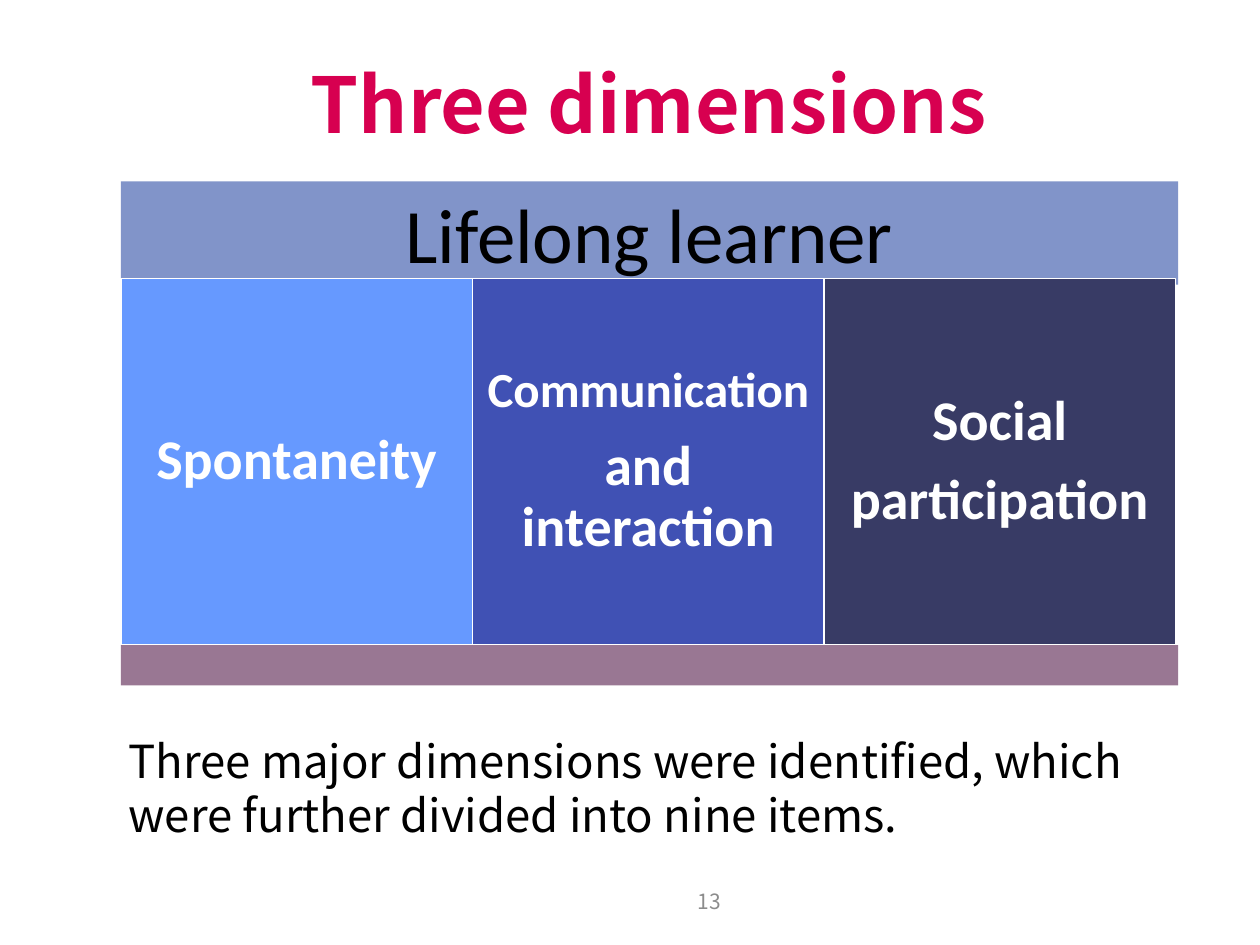
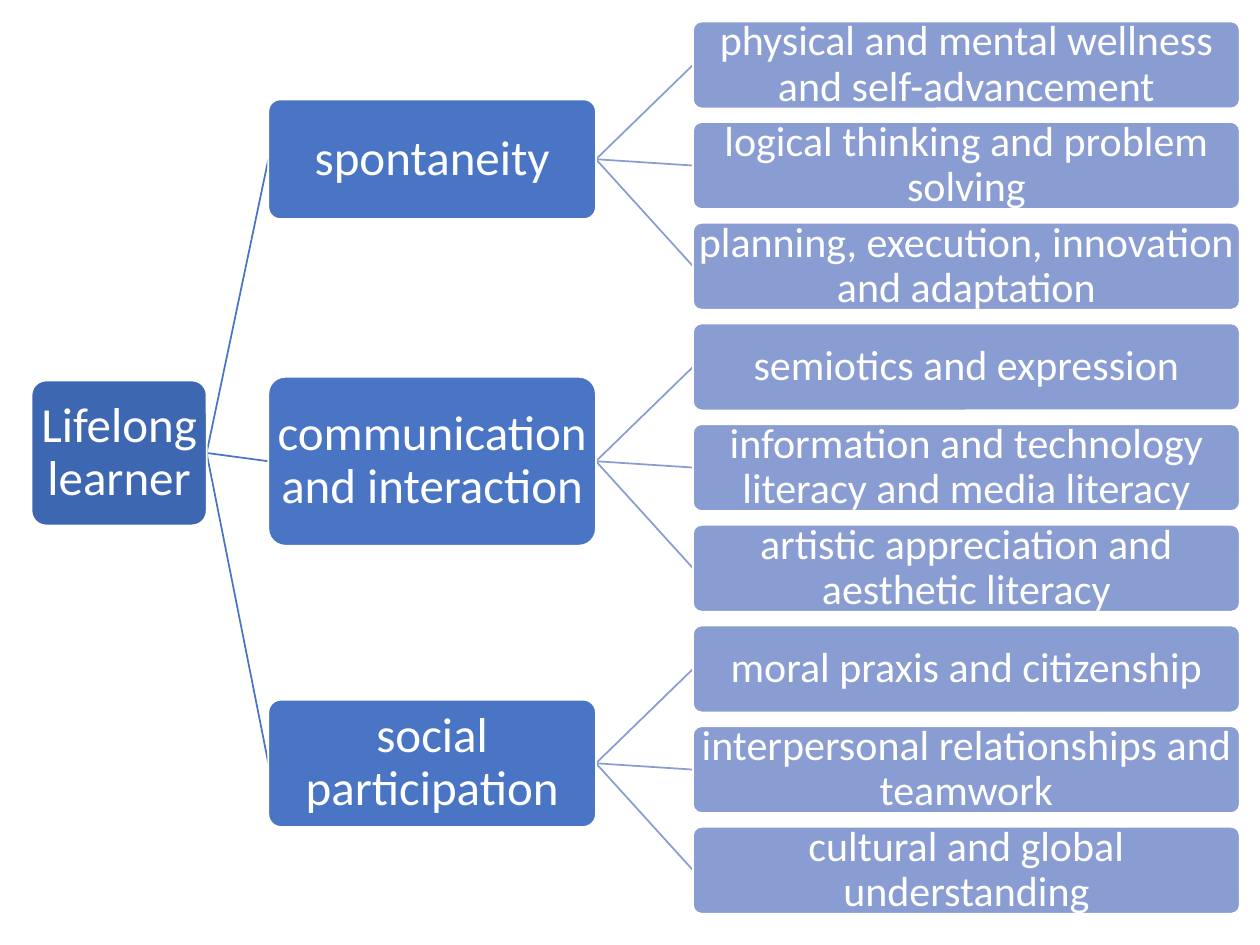
import dataclasses
import typing

import lxml.etree
import pptx
import pptx.dml.color
import pptx.enum.shapes
import pptx.enum.text
import pptx.oxml.ns
import pptx.util

WIDTH, HEIGHT = pptx.util.Inches(10), pptx.util.Inches(7.5)
COLUMN, ROW = WIDTH / 100, HEIGHT / 75

COLOURS = {
    "white": "FFFFFF", "black": "000000", "title": "D70050", "number": "8C8C8C",
    "header": "8194C9", "footer": "997793",
    "spontaneity": "6699FF", "communication": "4051B4", "social": "383B65",
    "root": "3E67B2", "branch": "4A75C5", "leaf": "899DD2",
}
SANS, CJK, CJK_TITLE = "Calibri", "Noto Sans CJK SC", "Noto Sans CJK TC"
RECTANGLE = pptx.enum.shapes.MSO_SHAPE.RECTANGLE
ROUNDED = pptx.enum.shapes.MSO_SHAPE.ROUNDED_RECTANGLE
CENTER = pptx.enum.text.PP_ALIGN.CENTER
LEFT = pptx.enum.text.PP_ALIGN.LEFT
RIGHT = pptx.enum.text.PP_ALIGN.RIGHT
MIDDLE = pptx.enum.text.MSO_ANCHOR.MIDDLE
TOP = pptx.enum.text.MSO_ANCHOR.TOP


@dataclasses.dataclass(frozen=True)
class Frame:
    """A rectangle in grid columns and rows."""
    left: float
    top: float
    width: float
    height: float

    @property
    def right(self) -> float:
        return self.left + self.width

    @property
    def middle(self) -> float:
        return self.top + self.height / 2

    def lengths(self) -> tuple[int, int, int, int]:
        return (round(self.left * COLUMN), round(self.top * ROW),
                round(self.width * COLUMN), round(self.height * ROW))


@dataclasses.dataclass(frozen=True)
class Style:
    """The look of a text; margins are in inches."""
    size: float
    colour: str = "white"
    font: str = SANS
    bold: bool = False
    align: typing.Any = CENTER
    anchor: typing.Any = MIDDLE
    margins: tuple[float, float] = (0.1, 0.05)
    spacing: typing.Any = 0.9
    after: float = 0


@dataclasses.dataclass(frozen=True)
class Dimension:
    """A panel of the first page: its lines with their sizes."""
    colour: str
    lines: tuple[tuple[str, float], ...]


@dataclasses.dataclass(frozen=True)
class Branch:
    """A branch of the tree with its leaves."""
    label: str
    height: float
    leaves: tuple[str, ...]


TITLE = Style(44, "title", CJK_TITLE, True, margins=(0.07, 0.04))
HEADER = Style(44, "black", margins=(0.18, 0.18), spacing=1.0)
PANEL = Style(32, bold=True, margins=(0.1, 0.12), after=11)
SUMMARY = Style(26, "black", CJK, align=LEFT, anchor=TOP, margins=(0, 0.05),
                spacing=pptx.util.Pt(31))
NUMBER = Style(12, "number", CJK, align=RIGHT, spacing=1.0)
NODE = Style(28, margins=(0.02, 0.02))
LEAF = dataclasses.replace(NODE, size=24)

DIMENSIONS = (
    Dimension("spontaneity", (("Spontaneity", 32),)),
    Dimension("communication", (("Communication", 28), ("and interaction", 32))),
    Dimension("social", (("Social", 32), ("participation", 32))),
)
BRANCHES = (
    Branch("spontaneity", 9.5, (
        "physical and mental wellness and self-advancement",
        "logical thinking and problem solving",
        "planning, execution, innovation and adaptation")),
    Branch("communication and interaction", 13.4, (
        "semiotics and expression",
        "information and technology literacy and media literacy",
        "artistic appreciation and aesthetic literacy")),
    Branch("social participation", 10.1, (
        "moral praxis and citizenship",
        "interpersonal relationships and teamwork",
        "cultural and global understanding")),
)


def rgb(name: str) -> pptx.dml.color.RGBColor:
    """Return a named colour."""
    return pptx.dml.color.RGBColor.from_string(COLOURS[name])


def write(box: typing.Any, text: str, style: Style) -> None:
    """Put styled text into a box."""
    text_frame = box.text_frame
    text_frame.text = text
    text_frame.word_wrap = True
    text_frame.auto_size = pptx.enum.text.MSO_AUTO_SIZE.NONE
    text_frame.vertical_anchor = style.anchor
    across, down = map(pptx.util.Inches, style.margins)
    text_frame.margin_left = text_frame.margin_right = across
    text_frame.margin_top = text_frame.margin_bottom = down
    for para in text_frame.paragraphs:
        para.alignment = style.align
        para.line_spacing = style.spacing
        para.space_before = pptx.util.Pt(0)
        para.space_after = pptx.util.Pt(style.after)
        for span in para.runs:
            span.font.name = style.font
            span.font.size = pptx.util.Pt(style.size)
            span.font.bold = style.bold
            span.font.color.rgb = rgb(style.colour)


def add_block(page: typing.Any, frame: Frame, colour: str, preset: typing.Any = RECTANGLE,
              outlined: bool = True) -> typing.Any:
    """Draw a filled preset shape."""
    box = page.shapes.add_shape(preset, *frame.lengths())
    box.shadow.inherit = False
    box.fill.solid()
    box.fill.fore_color.rgb = rgb(colour)
    if outlined:
        box.line.color.rgb = rgb("white")
        box.line.width = pptx.util.Pt(1)
    else:
        box.line.fill.background()
    return box


def add_text(page: typing.Any, frame: Frame, text: str, style: Style) -> None:
    """Draw a text box."""
    write(page.shapes.add_textbox(*frame.lengths()), text, style)


def add_node(page: typing.Any, frame: Frame, text: str, colour: str, style: Style) -> None:
    """Draw a rounded node of the tree."""
    box = add_block(page, frame, colour, ROUNDED)
    box.adjustments[0] = 0.1
    write(box, text, style)


def add_link(page: typing.Any, start: Frame, end: Frame, colour: str) -> None:
    """Join the right side of one frame to the left side of another."""
    link = page.shapes.add_connector(
        pptx.enum.shapes.MSO_CONNECTOR.STRAIGHT,
        round(start.right * COLUMN), round(start.middle * ROW),
        round(end.left * COLUMN), round(end.middle * ROW))
    link.line.color.rgb = rgb(colour)
    link.line.width = pptx.util.Pt(1)
    properties = link._element.spPr
    lxml.etree.SubElement(properties, pptx.oxml.ns.qn("a:effectLst"))


def build_dimensions(deck: typing.Any) -> None:
    """Build the page with the three panels."""
    page = deck.slides.add_slide(deck.slide_layouts[5])
    title = page.shapes.title
    title.left, title.top, title.width, title.height = Frame(16.1, 4.8, 70.8, 7.7).lengths()
    write(title, "Three dimensions", TITLE)

    header = Frame(9.6, 14.4, 83.9, 8.2)
    write(add_block(page, header, "header", outlined=False), "Lifelong learner", HEADER)
    panel_width, panel_top, panel_height = 27.9, 22.1, 29.1
    for index, dimension in enumerate(DIMENSIONS):
        frame = Frame(header.left + index * panel_width, panel_top, panel_width, panel_height)
        box = add_block(page, frame, dimension.colour)
        write(box, "\n".join(text for text, size in dimension.lines), PANEL)
        for para, (text, size) in zip(box.text_frame.paragraphs, dimension.lines):
            para.runs[0].font.size = pptx.util.Pt(size)
    footer = Frame(header.left, panel_top + panel_height, header.width, 3.2)
    add_block(page, footer, "footer", outlined=False)

    add_text(page, Frame(10.2, 57.7, 88, 9.8),
             "Three major dimensions were identified, which were further divided into nine items.",
             SUMMARY)
    add_text(page, Frame(35.7, 69.5, 22.5, 4), "13", NUMBER)


def build_tree(deck: typing.Any) -> None:
    """Build the page with the tree of dimensions and items."""
    page = deck.slides.add_slide(deck.slide_layouts[6])
    root = Frame(2.5, 30.2, 13.9, 11.5)
    leaf_pitch, leaf_height, branch_lift = 7.99, 6.9, 0.5
    for index, branch in enumerate(BRANCHES):
        first = index * len(branch.leaves)
        leaves = [Frame(55, 1.7 + (first + place) * leaf_pitch, 43.4, leaf_height)
                  for place in range(len(branch.leaves))]
        centre = leaves[1].middle - branch_lift
        frame = Frame(21.3, centre - branch.height / 2, 26, branch.height)
        add_link(page, root, frame, "branch")
        for leaf, text in zip(leaves, branch.leaves):
            add_link(page, frame, leaf, "leaf")
            add_node(page, leaf, text, "leaf", LEAF)
        add_node(page, frame, branch.label, "branch", NODE)
    add_node(page, root, "Lifelong learner", "root", NODE)


def main() -> None:
    """Build and save the deck."""
    deck = pptx.Presentation()
    deck.slide_width, deck.slide_height = WIDTH, HEIGHT
    build_dimensions(deck)
    build_tree(deck)
    deck.save("out.pptx")


if __name__ == "__main__":
    main()
